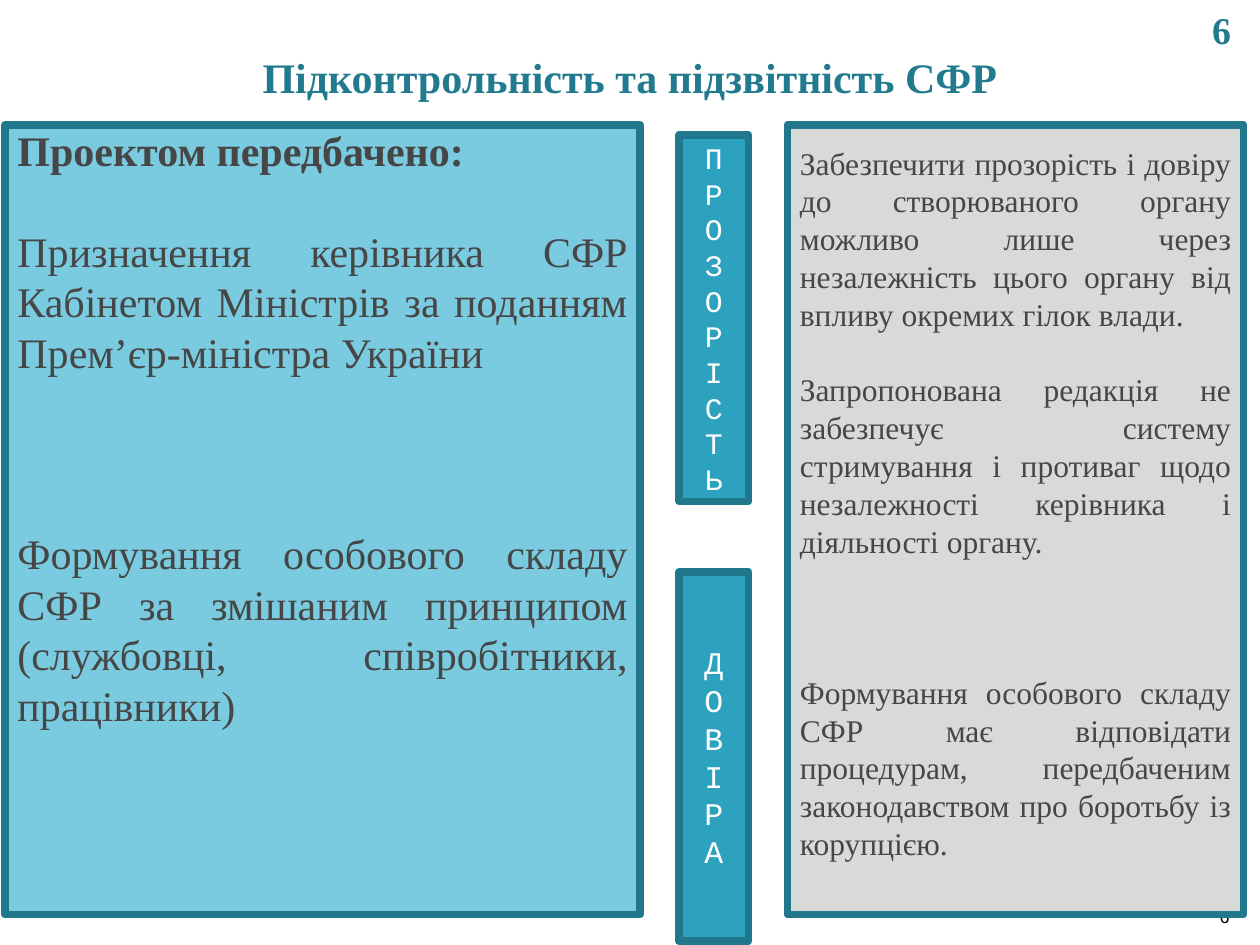
import dataclasses

import pptx
import pptx.dml.color
import pptx.enum.shapes
import pptx.enum.text
import pptx.util
from pptx.util import Inches

ALIGN = pptx.enum.text.PP_ALIGN
ANCHOR = pptx.enum.text.MSO_ANCHOR
SERIF, MONO = "Times New Roman", "Courier New"
TEAL, BORDER, DARK = "227A8F", "21788D", "464646"
LINE_RATIO = 1.2


@dataclasses.dataclass
class TextStyle:
    size: float
    font: str = SERIF
    color: str = DARK
    bold: bool = False
    align: ALIGN = ALIGN.CENTER
    anchor: ANCHOR = ANCHOR.MIDDLE
    inset: float = 0.05


@dataclasses.dataclass
class Panel:
    left: float
    top: float
    width: float
    height: float
    fill: str
    lines: list[str]
    style: TextStyle
    blank_lines: tuple[int, ...] = ()  # lines left free before each later paragraph


def rgb(value: str) -> pptx.dml.color.RGBColor:
    return pptx.dml.color.RGBColor.from_string(value)


def write(box, lines: list[str], style: TextStyle) -> None:
    frame = box.text_frame
    frame.text = "\n".join(lines)
    frame.word_wrap = True
    frame.auto_size = pptx.enum.text.MSO_AUTO_SIZE.NONE
    frame.vertical_anchor = style.anchor
    frame.margin_top = frame.margin_bottom = Inches(style.inset)
    for paragraph in frame.paragraphs:
        paragraph.alignment = style.align
        paragraph.line_spacing = pptx.util.Pt(style.size * LINE_RATIO)
        for span in paragraph.runs:
            span.font.name = style.font
            span.font.size = pptx.util.Pt(style.size)
            span.font.bold = style.bold
            span.font.color.rgb = rgb(style.color)


def add_label(page, left: float, top: float, width: float, height: float,
              text: str, style: TextStyle) -> None:
    box = page.shapes.add_textbox(*map(Inches, (left, top, width, height)))
    write(box, [text], style)


def add_panel(page, panel: Panel):
    place = (panel.left, panel.top, panel.width, panel.height)
    box = page.shapes.add_shape(
        pptx.enum.shapes.MSO_SHAPE.RECTANGLE, *map(Inches, place))
    box.shadow.inherit = False
    box.fill.solid()
    box.fill.fore_color.rgb = rgb(panel.fill)
    box.line.color.rgb = rgb(BORDER)
    box.line.width = pptx.util.Pt(4.33)
    write(box, panel.lines, panel.style)
    pitch = panel.style.size * LINE_RATIO
    for paragraph, blanks in zip(box.text_frame.paragraphs[1:], panel.blank_lines):
        paragraph.space_before = pptx.util.Pt(blanks * pitch)
    return box


def main() -> None:
    deck = pptx.Presentation()
    deck.slide_width, deck.slide_height = Inches(10), Inches(7.5)
    page = deck.slides.add_slide(deck.slide_layouts.get_by_name("Title Only"))

    title = page.shapes.title
    title.left, title.top = Inches(0.14), Inches(0.36)
    title.width, title.height = Inches(9.72), Inches(0.71)
    write(title, ["Підконтрольність та підзвітність СФР"],
          TextStyle(24, color=TEAL, bold=True, anchor=ANCHOR.TOP))

    add_label(page, 9.46, 7.01, 0.4, 0.4, "6",
              TextStyle(10, MONO, "000000", align=ALIGN.RIGHT, anchor=ANCHOR.BOTTOM))

    project = Panel(
        0.04, 0.99, 5.04, 6.27, "7ACBE0",
        ["Проектом передбачено:",
         "Призначення керівника СФР Кабінетом Міністрів за поданням "
         "Прем’єр-міністра України",
         "Формування особового складу СФР за змішаним принципом "
         "(службовці, співробітники, працівники)"],
        TextStyle(24, align=ALIGN.JUSTIFY, anchor=ANCHOR.TOP, inset=0), (1, 3))
    remarks = Panel(
        6.25, 0.99, 3.62, 6.27, "D9D9D9",
        ["Забезпечити прозорість і довіру до створюваного органу можливо лише "
         "через незалежність цього органу від впливу окремих гілок влади.",
         "Запропонована редакція не забезпечує систему стримування і противаг "
         "щодо незалежності керівника і діяльності органу.",
         "Формування особового складу СФР має відповідати процедурам, "
         "передбаченим законодавством про боротьбу із корупцією."],
        TextStyle(18, align=ALIGN.JUSTIFY, anchor=ANCHOR.TOP, inset=0.15), (1, 3))
    transparency = Panel(5.39, 1.07, 0.55, 2.91, "2DA2BF", list("ПРОЗОРІСТЬ"),
                         TextStyle(17, MONO, "FFFFFF"))
    trust = Panel(5.39, 4.54, 0.55, 2.93, "2DA2BF", list("ДОВІРА"),
                  TextStyle(18, MONO, "FFFFFF"))

    heading = add_panel(page, project).text_frame.paragraphs[0]
    heading.runs[0].font.bold = True
    for panel in (transparency, trust, remarks):
        add_panel(page, panel)

    add_label(page, 9.46, 0.02, 0.47, 0.43, "6",
              TextStyle(21.6, color=TEAL, bold=True))

    deck.save("out.pptx")


if __name__ == "__main__":
    main()
